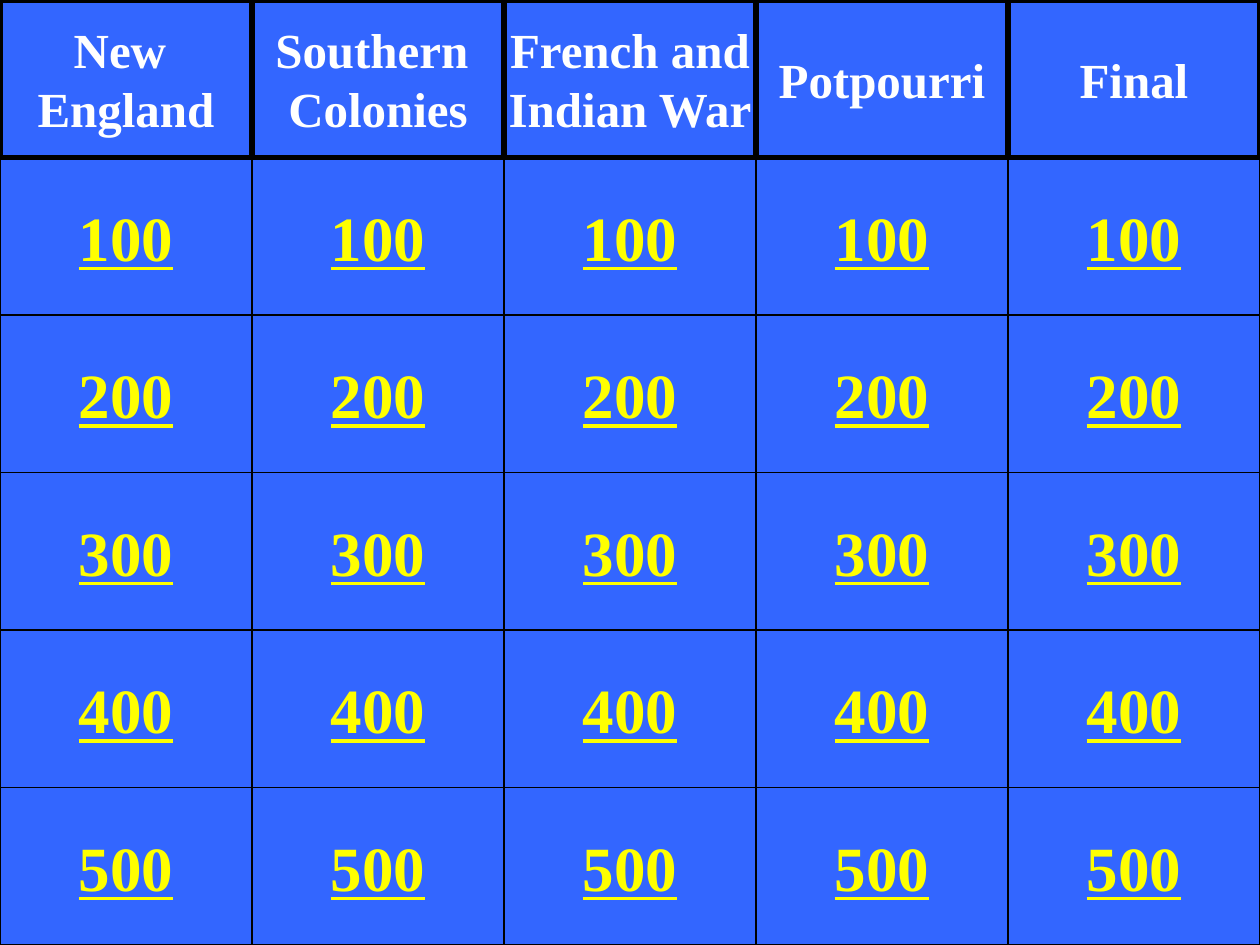
from dataclasses import dataclass

from pptx import Presentation
from pptx.dml.color import RGBColor
from pptx.enum.shapes import MSO_SHAPE
from pptx.enum.text import MSO_ANCHOR, PP_ALIGN
from pptx.util import Inches, Pt


@dataclass(frozen=True)
class Theme:
    """Colours, type sizes and line widths of the game board."""
    font: str = "Times New Roman"
    board: RGBColor = RGBColor(0x33, 0x66, 0xFF)
    edge: RGBColor = RGBColor(0, 0, 0)
    heading: RGBColor = RGBColor(0xFF, 0xFF, 0xFF)
    points: RGBColor = RGBColor(0xFF, 0xFF, 0)
    heading_size: float = 28
    points_size: float = 36
    heading_edge: float = 3
    points_edge: float = 0.75


THEME = Theme()
CATEGORIES = [
    ["New ", "England"],
    ["Southern ", "Colonies"],
    ["French and", "Indian War"],
    ["Potpourri"],
    ["Final"],
]
POINTS = [100, 200, 300, 400, 500]


def add_tile(slide, box, preset, lines, size, colour, edge, underline):
    """Place one bordered tile with centred bold text in the given box."""
    tile = slide.shapes.add_shape(preset, *box)
    tile.shadow.inherit = False
    tile.fill.solid()
    tile.fill.fore_color.rgb = THEME.board
    tile.line.color.rgb = THEME.edge
    tile.line.width = Pt(edge)
    frame = tile.text_frame
    frame.word_wrap = False
    frame.vertical_anchor = MSO_ANCHOR.MIDDLE
    for index, line in enumerate(lines):
        paragraph = frame.add_paragraph() if index else frame.paragraphs[0]
        paragraph.alignment = PP_ALIGN.CENTER
        run = paragraph.add_run()
        run.text = line
        run.font.name = THEME.font
        run.font.size = Pt(size)
        run.font.bold = True
        run.font.underline = underline
        run.font.color.rgb = colour


def add_points(slide, box):
    """Fill the box with a column of point buttons for every category."""
    left, top, width, height = box
    column, row = width // len(CATEGORIES), height // len(POINTS)
    for category in range(len(CATEGORIES)):
        for rank, value in enumerate(POINTS):
            cell = left + category * column, top + rank * row, column, row
            add_tile(slide, cell, MSO_SHAPE.ACTION_BUTTON_CUSTOM, [str(value)],
                     THEME.points_size, THEME.points, THEME.points_edge, True)


def add_headings(slide, box):
    """Fill the box with one row of category headings."""
    left, top, width, height = box
    column = width // len(CATEGORIES)
    for category, lines in enumerate(CATEGORIES):
        cell = left + category * column, top, column, height
        add_tile(slide, cell, MSO_SHAPE.RECTANGLE, lines,
                 THEME.heading_size, THEME.heading, THEME.heading_edge, None)


def main():
    """Build the game board slide and save it."""
    deck = Presentation()
    deck.slide_width, deck.slide_height = Inches(10), Inches(7.5)
    slide = deck.slides.add_slide(deck.slide_layouts[6])
    slide.background.fill.solid()
    slide.background.fill.fore_color.rgb = THEME.board
    width, height = deck.slide_width, deck.slide_height
    row = height // (len(POINTS) + 1)
    add_points(slide, (0, row, width, height - row))
    add_headings(slide, (0, 0, width, row))
    deck.save("out.pptx")


if __name__ == "__main__":
    main()
